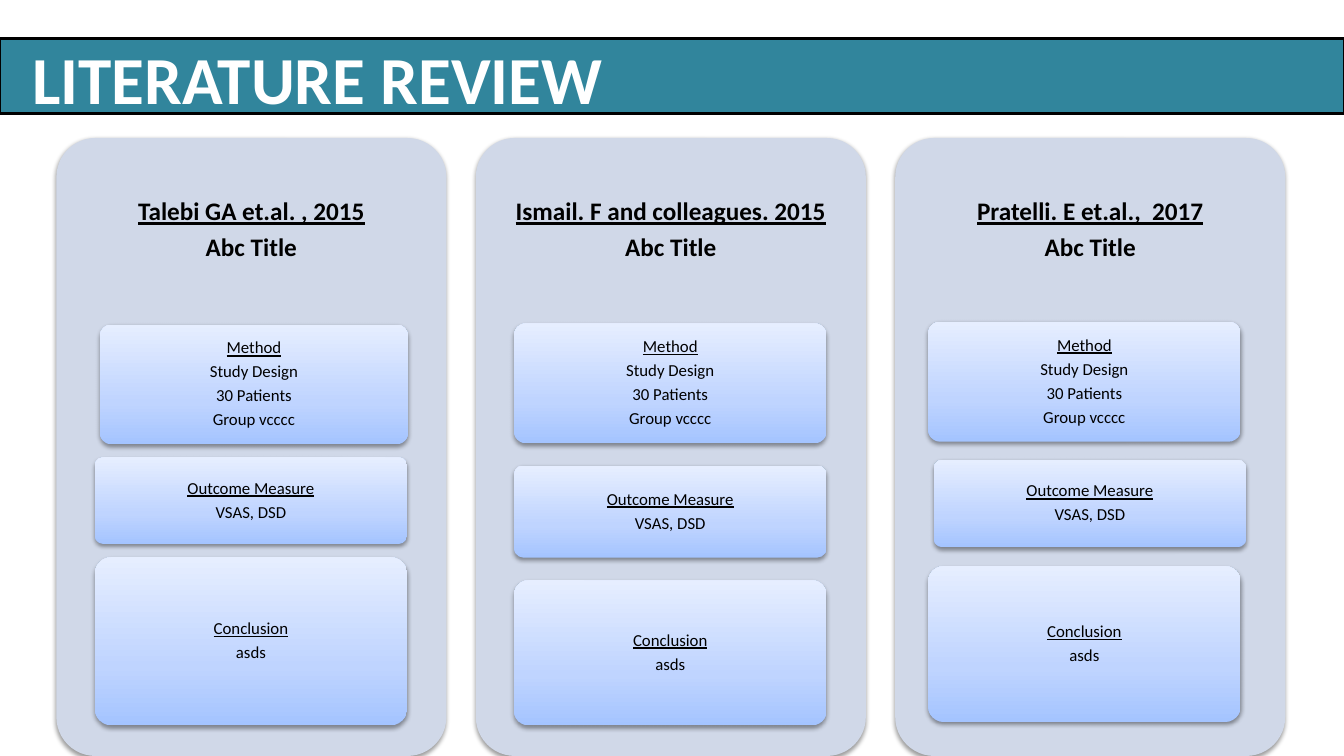
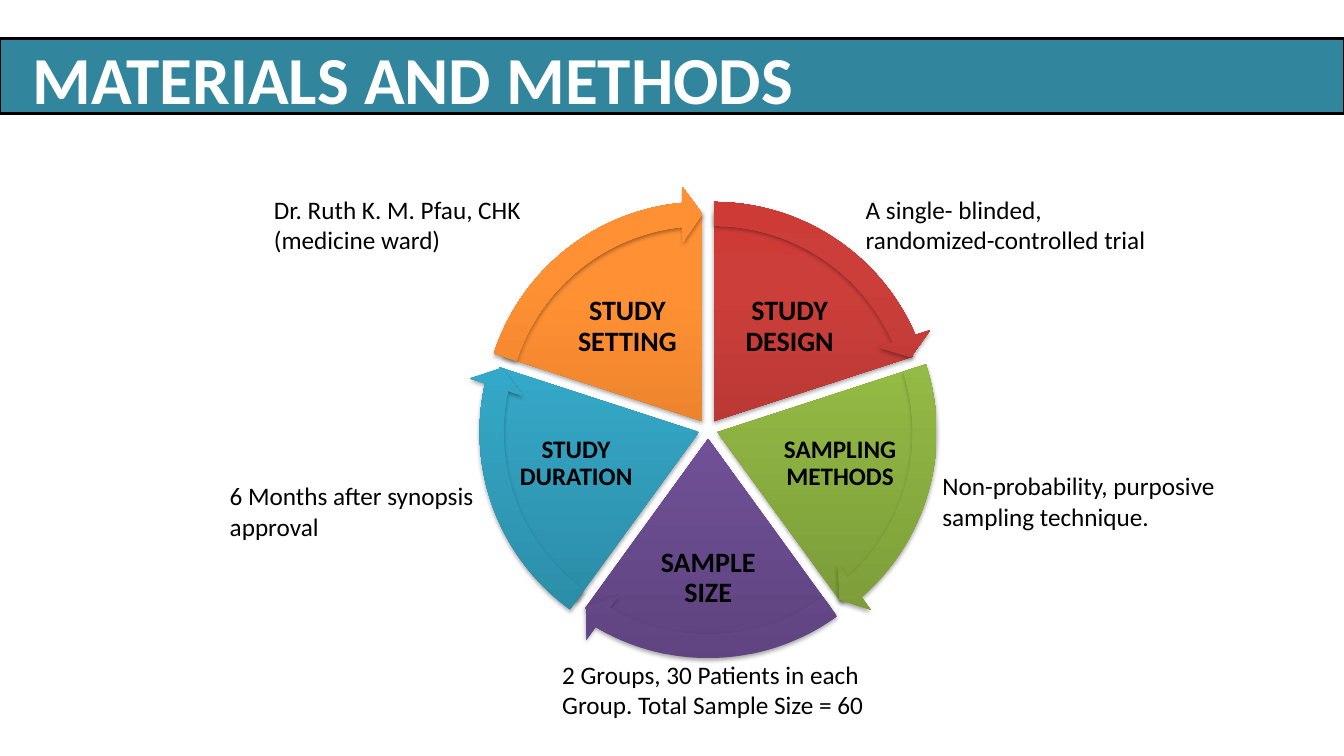
from copy import deepcopy
from dataclasses import dataclass
from functools import partial
from math import cos, radians, sin

from pptx import Presentation
from pptx.dml.color import RGBColor
from pptx.enum.shapes import MSO_SHAPE as Preset
from pptx.enum.text import MSO_ANCHOR as Anchor, MSO_AUTO_SIZE as AutoSize, PP_ALIGN as Align
from pptx.oxml import parse_xml
from pptx.oxml.ns import nsdecls, qn
from pptx.util import Pt


@dataclass(frozen=True)
class Theme:
    font: str = "Calibri"
    band: str = "31859C"
    ink: str = "000000"
    paper: str = "FFFFFF"
    card: str = "D0D8E8"
    block: tuple = ((0, "A4C4FF"), (0.35, "BFD4FF"), (1, "E6EEFF"))
    red: tuple = ((0, "9C2F2D"), (0.8, "CB3E3A"), (1, "CE3B37"))
    green: tuple = ((0, "779737"), (0.8, "9BC348"), (1, "9DC746"))
    purple: tuple = ((0, "5F4480"), (0.8, "7B58A6"), (1, "7C57A8"))
    blue: tuple = ((0, "2A88A2"), (0.8, "37B1D2"), (1, "34B4D6"))
    orange: tuple = ((0, "CC6E20"), (0.8, "FF9034"), (1, "FF9136"))
    title_size: int = 48
    label_size: int = 20
    text_size: int = 18
    block_size: int = 12


theme = Theme()


def write(shape, lines, size, color=theme.ink, bold=False, align=Align.LEFT,
          anchor=Anchor.TOP, inset=None, line_spacing=1, after=0):
    frame = shape.text_frame
    frame.text = "\n".join(lines)
    frame.word_wrap = True
    frame.auto_size = AutoSize.NONE
    frame.vertical_anchor = anchor
    if inset is not None:
        frame.margin_left = frame.margin_right = Pt(inset)
        frame.margin_top = frame.margin_bottom = Pt(inset)
    for index, paragraph in enumerate(frame.paragraphs):
        paragraph.alignment = align
        paragraph.line_spacing = line_spacing
        paragraph.space_after = Pt(size * after)
        for run in paragraph.runs:
            run.font.name = theme.font
            run.font.size = Pt(size)
            run.font.bold = bold
            run.font.underline = len(lines) > 1 and index == 0
            run.font.color.rgb = RGBColor.from_string(color)


def paint(shape, fill, shadow_opacity):
    if isinstance(fill, str):
        shape.fill.solid()
        shape.fill.fore_color.rgb = RGBColor.from_string(fill)
    else:
        shape.fill.gradient()
        shape.fill.gradient_angle = 90
        stop_list = shape.element.spPr.find(".//" + qn("a:gsLst"))
        stop_list.append(deepcopy(stop_list[0]))
        for stop, (position, color) in zip(shape.fill.gradient_stops, fill):
            stop.position = position
            stop.color.rgb = RGBColor.from_string(color)
    shape.line.fill.background()
    shape.shadow.inherit = False
    shape.element.spPr.find(qn("a:effectLst")).append(parse_xml(
        f'<a:outerShdw {nsdecls("a")} blurRad="40000" dist="22000" dir="5400000" rotWithShape="0">'
        f'<a:srgbClr val="{theme.ink}"><a:alpha val="{shadow_opacity * 1000}"/></a:srgbClr>'
        "</a:outerShdw>"))


write_label = partial(write, align=Align.CENTER, anchor=Anchor.MIDDLE,
                      inset=2.4, line_spacing=0.9, after=0.35)

presentation = Presentation()
presentation.slide_width = Pt(960)
presentation.slide_height = Pt(540)

layout = presentation.slide_layouts[5]
layout_title, *layout_footers = layout.placeholders
for footer in layout_footers:
    footer.element.getparent().remove(footer.element)
layout_title.left, layout_title.top = Pt(16), Pt(23)
layout_title.width, layout_title.height = Pt(928), Pt(65.5)

slides = []
for title in ("LITERATURE REVIEW", "MATERIALS AND METHODS"):
    slide = presentation.slides.add_slide(layout)
    write(slide.shapes.title, [title], theme.title_size, theme.paper, bold=True,
          anchor=Anchor.MIDDLE)
    slides.append(slide)
review, methods = slides

band = review.shapes.add_shape(Preset.RECTANGLE, 0, Pt(27.2), Pt(960), Pt(54))
band.fill.solid()
band.fill.fore_color.rgb = RGBColor.from_string(theme.band)
band.line.color.rgb = RGBColor.from_string(theme.ink)
band.line.width = Pt(2)
band.shadow.inherit = False
layout.shapes.element.insert(2, band.element)

card_left, card_top, card_pitch = 40.3, 98.6, 299.6
card_width, card_height = 278.6, 441.4
block_texts = (
    ("Method", "Study Design", "30 Patients", "Group vcccc"),
    ("Outcome Measure", "VSAS, DSD"),
    ("Conclusion", "asds"),
)
studies = (
    ("Talebi GA et.al. , 2015",
     ((71.3, 231.8, 220.3, 85.7), (67.7, 326.6, 223.2, 62), (67.7, 398, 223.2, 120.2))),
    ("Ismail. F and colleagues. 2015",
     ((367.2, 231, 223.2, 85.7), (367.2, 332.6, 223.2, 65.7), (367.2, 414.5, 223.2, 103.7))),
    ("Pratelli. E et.al.,  2017",
     ((663, 229.8, 223.2, 85.7), (667, 328.4, 223.2, 62.6), (663, 404.4, 223.2, 111.4))),
)
for column, (study, blocks) in enumerate(studies):
    card = review.shapes.add_shape(
        Preset.ROUNDED_RECTANGLE, Pt(card_left + column * card_pitch), Pt(card_top),
        Pt(card_width), Pt(card_height))
    card.adjustments[0] = 0.1
    paint(card, theme.card, 38)
    write_label(card, (study, "Abc Title"), theme.text_size, bold=True, inset=5)
    card.text_frame.margin_bottom = Pt(314)
    for box, lines in zip(blocks, block_texts):
        block = review.shapes.add_shape(Preset.ROUNDED_RECTANGLE, *map(Pt, box))
        block.adjustments[0] = 0.1
        paint(block, theme.block, 38)
        write_label(block, lines, theme.block_size)

wheel_x, wheel_y, wheel_gap = 505.8, 306.5, 7
pie_size, arrow_size = 298.8, 335.6
sweep = 72
angle_unit = 0.6
arrow_tip = 3.275
wedges = (
    ("STUDY DESIGN", theme.red, theme.label_size, (516.2, 201.6, 95.8, 64)),
    ("SAMPLING METHODS", theme.green, theme.text_size, (555.8, 295.9, 88.6, 71.3)),
    ("SAMPLE SIZE", theme.purple, theme.label_size, (463, 373.7, 85.7, 78.5)),
    ("STUDY DURATION", theme.blue, theme.text_size, (367.2, 295.9, 88.6, 71.3)),
    ("STUDY SETTING", theme.orange, theme.label_size, (400.3, 201.6, 95.8, 64)),
)
for preset, size in ((Preset.PIE, pie_size), (Preset.CIRCULAR_ARROW, arrow_size)):
    for index, (label, colors, label_size, label_box) in enumerate(wedges):
        start = (270 + index * sweep) % 360
        end = (start + sweep) % 360
        middle = radians(start + sweep / 2)
        wedge = methods.shapes.add_shape(
            preset,
            Pt(wheel_x + wheel_gap * cos(middle) - size / 2),
            Pt(wheel_y + wheel_gap * sin(middle) - size / 2),
            Pt(size), Pt(size))
        if preset == Preset.PIE:
            angles = (start * angle_unit, end * angle_unit)
        else:
            angles = (0.051, arrow_tip, end * angle_unit - arrow_tip, start * angle_unit, 0.059)
        for position, value in enumerate(angles):
            wedge.adjustments[position] = value
        paint(wedge, colors, 35)
        if preset == Preset.PIE:
            text_box = methods.shapes.add_textbox(*map(Pt, label_box))
            write_label(text_box, [label], label_size, bold=True)

notes = (
    ("A single- blinded, randomized-controlled trial", 611.3, 135.4, 229),
    ("Non-probability, purposive sampling technique.", 666, 332.6, 229),
    ("Dr. Ruth K. M. Pfau, CHK (medicine ward)", 188.6, 135.4, 229),
    ("6 Months after synopsis approval", 157, 339.8, 201),
    ("2 Groups, 30 Patients in each Group. Total Sample Size = 60", 394.5, 467.3, 235.4),
)
for note, left, top, width in notes:
    text_box = methods.shapes.add_textbox(Pt(left), Pt(top), Pt(width), Pt(51))
    write(text_box, [note], theme.text_size)

presentation.save("out.pptx")
